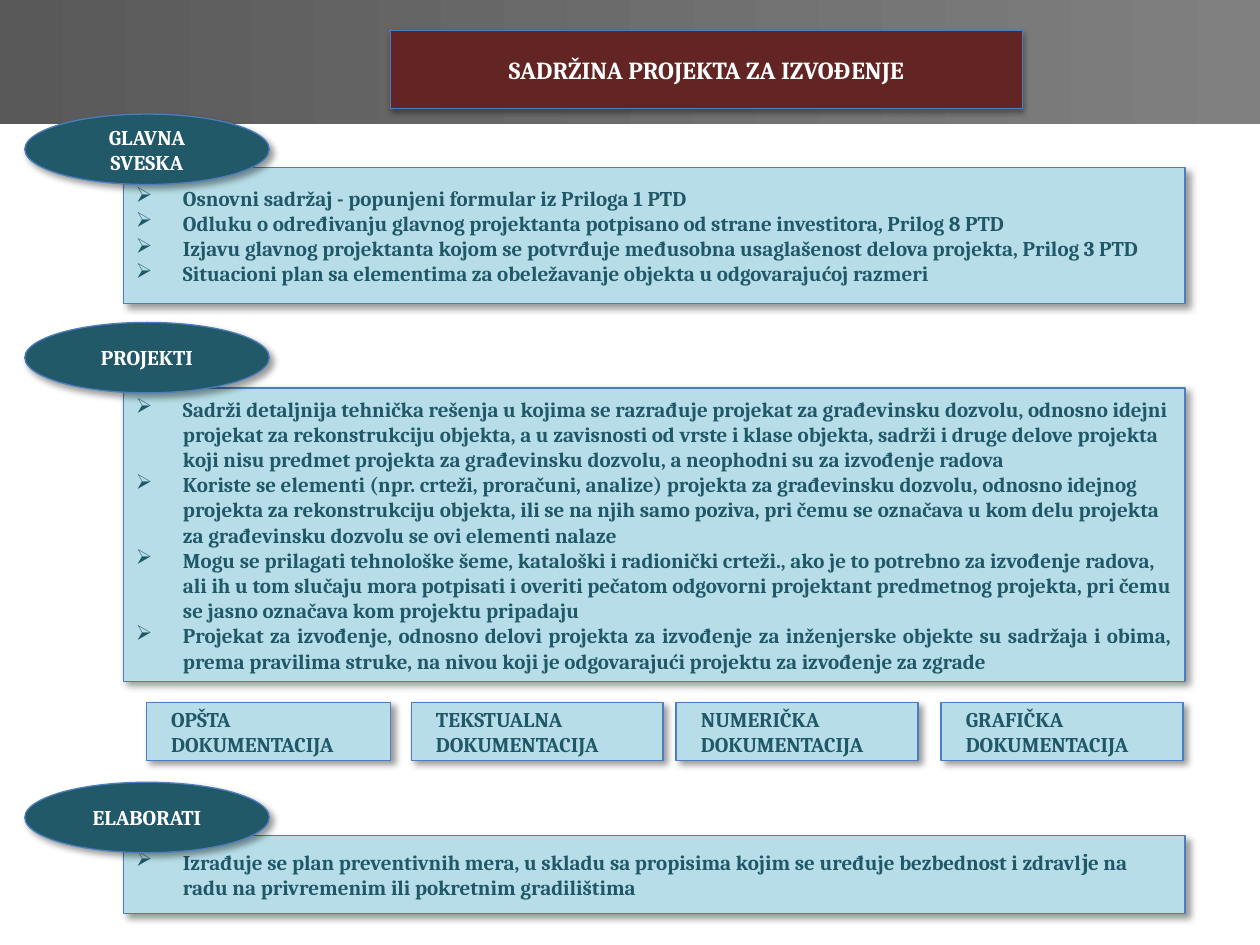
from lxml import etree
from pptx import Presentation
from pptx import util as u
from pptx.dml.color import RGBColor
from pptx.enum import shapes, text
from pptx.oxml.ns import qn

Cm, Pt = u.Cm, u.Pt
RECT = shapes.MSO_SHAPE.RECTANGLE
OVAL = shapes.MSO_SHAPE.OVAL

WHITE = RGBColor(0xFF, 0xFF, 0xFF)
GRAY_DARK = RGBColor(0x59, 0x59, 0x59)
GRAY_LIGHT = RGBColor(0x80, 0x80, 0x80)
MAROON = RGBColor(0x63, 0x25, 0x23)
PALE_BLUE = RGBColor(0xB7, 0xDE, 0xE8)
TEAL = RGBColor(0x21, 0x59, 0x68)
TEAL_TEXT = RGBColor(0x21, 0x58, 0x68)
EDGE = RGBColor(0x4B, 0x7E, 0xBC)

FONT = "Cambria"
# Shadow: opacity in percent, blur and distance in points, direction in degrees
TITLE_SHADOW = (35, 3.1, 1.8, 90)
BOX_SHADOW = (40, 4, 3, 45)

# Each section: label, label top, panel top, panel height, bullet items
SECTIONS = [
    ("GLAVNA SVESKA", 2.3, 3.38, 2.74, [
        "Osnovni sadržaj - popunjeni formular iz Priloga 1 PTD",
        "Odluku o određivanju glavnog projektanta potpisano od strane investitora, Prilog 8 PTD",
        "Izjavu glavnog projektanta kojom se potvrđuje međusobna usaglašenost delova projekta, Prilog 3 PTD",
        "Situacioni plan sa elementima za obeležavanje objekta u odgovarajućoj razmeri",
    ]),
    ("PROJEKTI", 6.5, 7.82, 5.92, [
        "Sadrži detaljnija tehnička rešenja u kojima se razrađuje projekat za građevinsku dozvolu, "
        "odnosno idejni projekat za rekonstrukciju objekta, a u zavisnosti od vrste i klase objekta, "
        "sadrži i druge delove projekta koji nisu predmet projekta za građevinsku dozvolu, "
        "a neophodni su za izvođenje radova",
        "Koriste se elementi (npr. crteži, proračuni, analize) projekta za građevinsku dozvolu, "
        "odnosno idejnog projekta za rekonstrukciju objekta, ili se na njih samo poziva, "
        "pri čemu se označava u kom delu projekta za građevinsku dozvolu se ovi elementi nalaze",
        "Mogu se prilagati tehnološke šeme, kataloški i radionički crteži., ako je to potrebno "
        "za izvođenje radova, ali ih u tom slučaju mora potpisati i overiti pečatom odgovorni "
        "projektant predmetnog projekta, pri čemu se jasno označava kom projektu pripadaju",
        "Projekat za izvođenje, odnosno delovi projekta za izvođenje za inženjerske objekte su "
        "sadržaja i obima, prema pravilima struke, na nivou koji je odgovarajući projektu za "
        "izvođenje za zgrade",
    ]),
    ("ELABORATI", 15.77, 16.84, 1.57, [
        "Izrađuje se plan preventivnih mera, u skladu sa propisima kojim se uređuje bezbednost "
        "i zdravlјe na radu na privremenim ili pokretnim gradilištima",
    ]),
]
DOCUMENTS = [("OPŠTA", 4.93), ("TEKSTUALNA", 5.08), ("NUMERIČKA", 4.88), ("GRAFIČKA", 4.88)]


def add_shadow(sp, opacity, blur, dist, angle):
    effects = sp._element.spPr.find(qn("a:effectLst"))
    shadow = etree.SubElement(effects, qn("a:outerShdw"), blurRad=str(Pt(blur)),
                              dist=str(Pt(dist)), dir=str(angle * 60000), rotWithShape="0")
    color = etree.SubElement(shadow, qn("a:srgbClr"), val="000000")
    etree.SubElement(color, qn("a:alpha"), val=str(opacity * 1000))


def add_box(s, kind, x, y, w, h, fill, shadow=BOX_SHADOW):
    sp = s.shapes.add_shape(kind, Cm(x), Cm(y), Cm(w), Cm(h))
    sp.shadow.inherit = False
    add_shadow(sp, *shadow)
    sp.fill.solid()
    sp.fill.fore_color.rgb = fill
    sp.line.color.rgb = EDGE
    sp.line.width = Pt(0.75)
    sp.text_frame.word_wrap = True
    sp.text_frame.vertical_anchor = text.MSO_ANCHOR.MIDDLE
    return sp


def add_run(p, content, color, size=12):
    r = p.add_run()
    r.text = content
    r.font.name = FONT
    r.font.size = Pt(size)
    r.font.bold = True
    r.font.color.rgb = color


def add_label(sp, content, color, size=12, indent=None):
    p = sp.text_frame.paragraphs[0]
    p.alignment = text.PP_ALIGN.CENTER
    p.space_after = Pt(6)
    if indent:
        p.alignment = text.PP_ALIGN.LEFT
        p._p.get_or_add_pPr().set("marL", str(Cm(indent)))
    add_run(p, content, color, size)


def add_bullets(sp, items):
    tf = sp.text_frame
    for i, item in enumerate(items):
        p = tf.paragraphs[0] if i == 0 else tf.add_paragraph()
        # The fourth item of a list is justified when it runs over several lines
        justified = i == 3 and len(item) > 100
        p.alignment = text.PP_ALIGN.JUSTIFY if justified else text.PP_ALIGN.LEFT
        pPr = p._p.get_or_add_pPr()
        pPr.set("marL", str(Cm(0.95)))
        pPr.set("indent", str(-Cm(0.95)))
        etree.SubElement(pPr, qn("a:buChar"), char="➢")
        if justified:
            tabs = etree.SubElement(pPr, qn("a:tabLst"))
            etree.SubElement(tabs, qn("a:tab"), pos=str(Cm(0.51)), algn="l")
        add_run(p, item, TEAL_TEXT)


def add_header(s):
    band = s.shapes.add_shape(RECT, 0, 0, Cm(25.4), Cm(2.51))
    band.shadow.inherit = False
    band.line.fill.background()
    band.fill.gradient()
    band.fill.gradient_angle = 0
    for stop, color in zip(band.fill.gradient_stops, (GRAY_DARK, GRAY_LIGHT)):
        stop.color.rgb = color
    title = add_box(s, RECT, 7.87, 0.61, 12.75, 1.58, MAROON, TITLE_SHADOW)
    add_label(title, "SADRŽINA PROJEKTA ZA IZVOĐENJE", WHITE, size=14)


def add_section(s, label, label_top, panel_top, panel_height, items):
    panel = add_box(s, RECT, 2.49, panel_top, 21.4, panel_height, PALE_BLUE)
    add_bullets(panel, items)
    oval = add_box(s, OVAL, 0.5, label_top, 4.93, 1.42, TEAL)
    add_label(oval, label, WHITE)


def main():
    prs = Presentation()
    prs.slide_width, prs.slide_height = Cm(25.4), Cm(19.05)
    s = prs.slides.add_slide(prs.slide_layouts[6])

    add_header(s)
    for section in SECTIONS:
        add_section(s, *section)

    # Row of documentation kinds
    for i, (kind, width) in enumerate(DOCUMENTS):
        box = add_box(s, RECT, 2.95 + 5.34 * i, 14.16, width, 1.17, PALE_BLUE)
        add_label(box, f"{kind} DOKUMENTACIJA", TEAL_TEXT, indent=0.25)

    prs.save("out.pptx")


if __name__ == "__main__":
    main()
